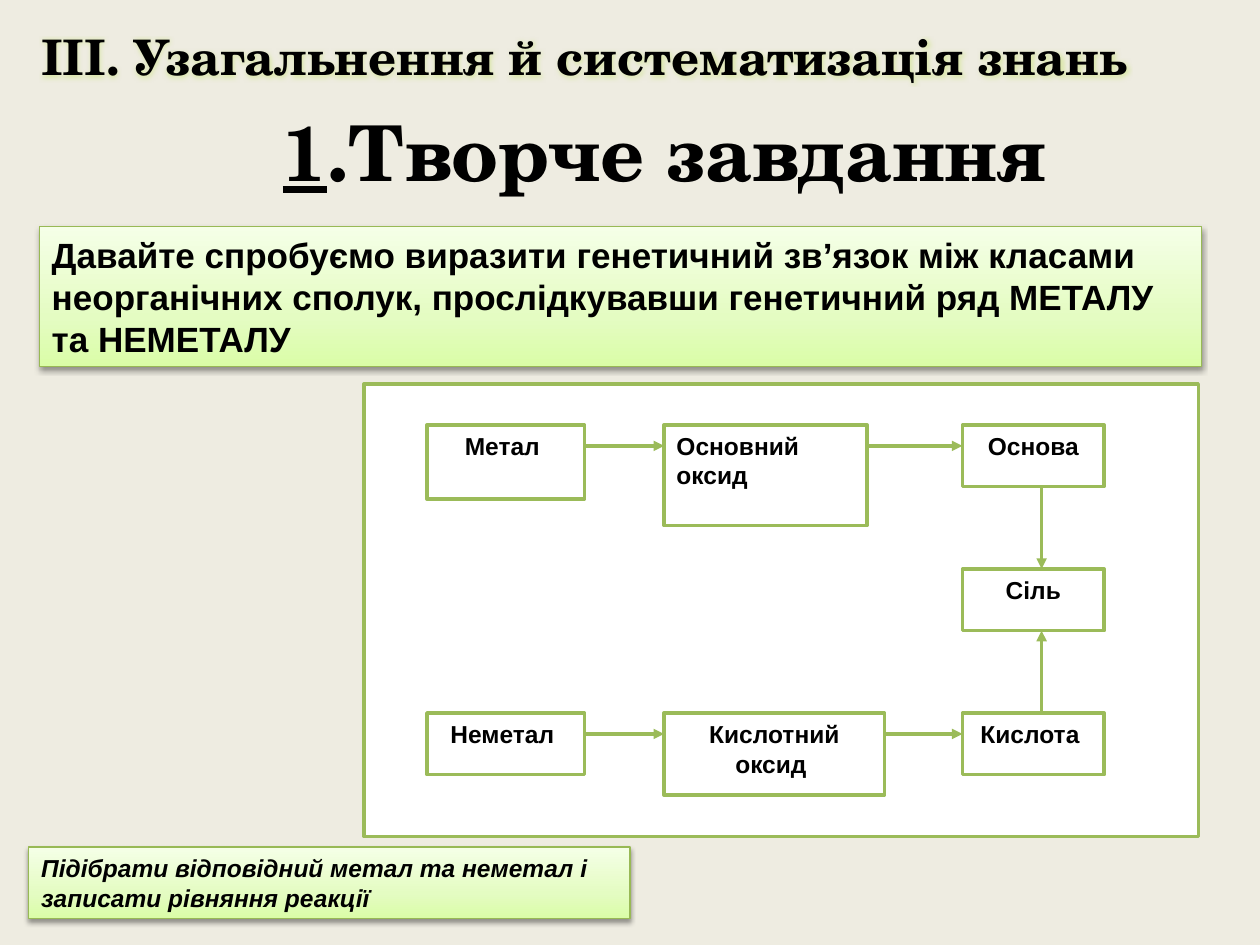
from collections import namedtuple
from dataclasses import dataclass

from lxml import etree
from pptx import Presentation
from pptx.dml.color import RGBColor
from pptx.enum.shapes import MSO_CONNECTOR, MSO_SHAPE
from pptx.enum.text import MSO_ANCHOR, MSO_AUTO_SIZE, PP_ALIGN
from pptx.oxml.ns import qn
from pptx.util import Pt

RECTANGLE = MSO_SHAPE.RECTANGLE
STRAIGHT = MSO_CONNECTOR.STRAIGHT
TOP, MIDDLE = MSO_ANCHOR.TOP, MSO_ANCHOR.MIDDLE
GROW = MSO_AUTO_SIZE.SHAPE_TO_FIT_TEXT
LEFT, CENTER, JUSTIFY = PP_ALIGN.LEFT, PP_ALIGN.CENTER, PP_ALIGN.JUSTIFY

Span = namedtuple("Span", "text size font italic underline", defaults=(False, False))


@dataclass(frozen=True)
class Theme:
    page: str = "EEECE1"
    ink: str = "000000"
    paper: str = "FFFFFF"
    green: str = "9BBB59"
    banner_edge: str = "98B955"
    glow: str = "BFE05A"
    banner_stops: tuple = ((0, "DAFDA7"), (35, "E4FCC2"), (100, "F5FFE7"))
    body_font: str = "Arial"
    title_font: str = "TeX Gyre Schola"
    title_size: int = 44
    heading_size: int = 28
    task_size: int = 20
    label_size: int = 14
    line_width: float = 2
    edge_width: float = 0.75


THEME = Theme()

# Columns and rows of the scheme, in points
METAL_X, OXIDE_X, PRODUCT_X = 244, 379.5, 550
ROW_TOP, ROW_STEP = 242.8, 82.3
ARROW_DROP = 12
SALT_ARROW_X = 595.2


def rgb(value):
    return RGBColor.from_string(value)


def add_xml(parent, tag, **attributes):
    return etree.SubElement(parent, qn(tag), attributes)


def add_color(parent, color, alpha=None):
    node = add_xml(parent, "a:srgbClr", val=color)
    if alpha:
        add_xml(node, "a:alpha", val=str(alpha * 1000))


def write_text(shape, spans, align=LEFT, anchor=TOP):
    frame = shape.text_frame
    frame.word_wrap = True
    frame.vertical_anchor = anchor
    para = frame.paragraphs[0]
    para.alignment = align
    for span in spans:
        run = para.add_run()
        run.text = span.text
        font = run.font
        font.name = span.font
        font.size = Pt(span.size)
        font.bold = True
        font.italic = span.italic
        font.underline = span.underline
        font.color.rgb = rgb(THEME.ink)
    return frame


def add_rectangle(shapes, bounds, edge, width):
    box = shapes.add_shape(RECTANGLE, *map(Pt, bounds))
    box.shadow.inherit = False
    box.fill.solid()
    box.fill.fore_color.rgb = rgb(THEME.paper)
    box.line.color.rgb = rgb(edge)
    box.line.width = Pt(width)
    return box


def add_banner(page, bounds, span):
    box = add_rectangle(page.shapes, bounds, THEME.banner_edge, THEME.edge_width)
    # Three-stop gradient, darkest at the bottom
    box.fill.gradient()
    box.fill.gradient_angle = 90
    properties = box.element.spPr
    stops = properties.find(".//" + qn("a:gsLst"))
    for stop in list(stops):
        stops.remove(stop)
    for position, color in THEME.banner_stops:
        add_color(add_xml(stops, "a:gs", pos=str(position * 1000)), color)
    # Soft shadow below
    shadow = add_xml(properties.find(qn("a:effectLst")), "a:outerShdw",
                     blurRad=str(Pt(3.1)), dist=str(Pt(1.6)),
                     dir="5400000", rotWithShape="0")
    add_color(shadow, THEME.ink, 38)
    write_text(box, [span], anchor=MIDDLE).auto_size = GROW


def add_node(group, text, left, row, width, height, align=CENTER):
    bounds = (left, ROW_TOP + row * ROW_STEP, width, height)
    box = add_rectangle(group.shapes, bounds, THEME.green, THEME.line_width)
    write_text(box, [Span(text, THEME.label_size, THEME.body_font)], align)
    return box


def add_arrow(group, start, end):
    arrow = group.shapes.add_connector(STRAIGHT, *start, *end)
    arrow.line.color.rgb = rgb(THEME.green)
    arrow.line.width = Pt(THEME.line_width)
    properties = arrow.element.spPr
    add_xml(properties.find(qn("a:ln")), "a:tailEnd", type="triangle")
    add_xml(properties, "a:effectLst")


def link_across(group, source, target):
    y = source.top + Pt(ARROW_DROP)
    add_arrow(group, (source.left + source.width, y), (target.left, y))


def add_scheme(page):
    group = page.shapes.add_group_shape()
    add_rectangle(group.shapes, (208, 219.5, 476.8, 258.5),
                  THEME.green, THEME.line_width)

    # Boxes of the metal row, the salt and the nonmetal row
    metal = add_node(group, "Метал ", METAL_X, 0, 90, 42.5)
    basic_oxide = add_node(group, "Основний оксид", OXIDE_X, 0, 116, 57.5, LEFT)
    base = add_node(group, "Основа", PRODUCT_X, 0, 81, 35.3)
    salt = add_node(group, "Сіль", PRODUCT_X, 1, 81, 35.3)
    nonmetal = add_node(group, "Неметал ", METAL_X, 2, 90, 35.3)
    acid_oxide = add_node(group, "Кислотний оксид ", OXIDE_X, 2, 126, 47)
    acid = add_node(group, "Кислота ", PRODUCT_X, 2, 81, 35.3)

    # Arrows along both rows, then into the salt
    for chain in ((metal, basic_oxide, base), (nonmetal, acid_oxide, acid)):
        for source, target in zip(chain, chain[1:]):
            link_across(group, source, target)
    x = Pt(SALT_ARROW_X)
    add_arrow(group, (x, base.top + base.height), (x, salt.top))
    add_arrow(group, (x, acid.top), (x, salt.top + salt.height))


def add_title(page, bounds, spans, align):
    box = page.shapes.add_textbox(*map(Pt, bounds))
    frame = write_text(box, spans, align)
    frame.auto_size = GROW
    return frame


def add_glow(frame):
    for fill in frame.paragraphs[0].runs[0].font.fill and \
            box_fills(frame):
        effects = etree.Element(qn("a:effectLst"))
        add_color(add_xml(effects, "a:glow", rad=str(Pt(5))), THEME.glow, 40)
        fill.addnext(effects)


def box_fills(frame):
    return [run.font.fill and fill
            for run in frame.paragraphs[0].runs
            for fill in run._r.iter(qn("a:solidFill"))]


def main():
    deck = Presentation()
    deck.slide_width, deck.slide_height = Pt(720), Pt(540)
    page = deck.slides.add_slide(deck.slide_layouts[6])
    page.background.fill.solid()
    page.background.fill.fore_color.rgb = rgb(THEME.page)

    # Task, scheme and instruction
    add_banner(page, (22.5, 129.5, 664, 80),
               Span("Давайте спробуємо виразити генетичний зв’язок між класами "
                    "неорганічних сполук, прослідкувавши генетичний ряд МЕТАЛУ "
                    "та НЕМЕТАЛУ", THEME.task_size, THEME.body_font))
    add_scheme(page)
    add_banner(page, (16.5, 484, 343.5, 41),
               Span("Підібрати відповідний метал та неметал і записати рівняння "
                    "реакції", THEME.label_size, THEME.body_font, italic=True))

    # Headings
    heading = add_title(page, (16.5, 11.5, 686, 56),
                        [Span("ІІІ. Узагальнення й систематизація знань",
                              THEME.heading_size, THEME.title_font)], JUSTIFY)
    add_glow(heading)
    title = add_title(page, (152, 56, 456, 60.5),
                      [Span("1", THEME.title_size, THEME.title_font, underline=True),
                       Span(".Творче завдання", THEME.title_size, THEME.title_font)],
                      CENTER)
    title.word_wrap = False

    deck.save("out.pptx")


if __name__ == "__main__":
    main()
